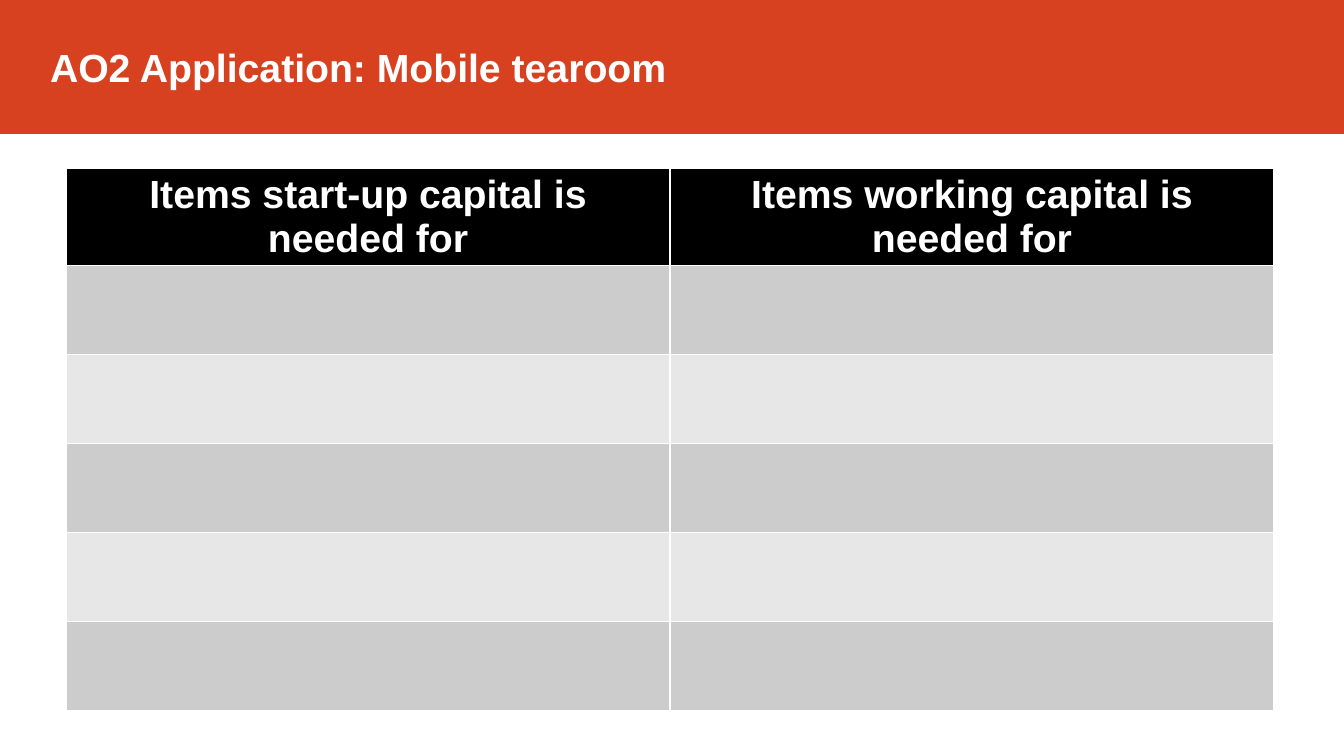
from dataclasses import dataclass

from pptx import Presentation
from pptx.dml.color import RGBColor
from pptx.enum import shapes, text
from pptx.slide import Slide
from pptx.text.text import TextFrame
from pptx import util as u

EMU_PER_PX = 914400 / 100.8
PAGE_WIDTH, PAGE_HEIGHT = 1344, 756
BANNER_RED = RGBColor(0xD7, 0x41, 0x20)
HEADER_BLACK = RGBColor(0x00, 0x00, 0x00)
DARK_BAND = RGBColor(0xCC, 0xCC, 0xCC)
LIGHT_BAND = RGBColor(0xE7, 0xE7, 0xE7)
WHITE = RGBColor(0xFF, 0xFF, 0xFF)


@dataclass(frozen=True)
class Banner:
    title: str
    height: int
    indent: int


@dataclass(frozen=True)
class BandedTable:
    headings: tuple[str, ...]
    empty_rows: int
    left: int
    top: int
    column_width: int
    row_height: int


BANNER = Banner("AO2 Application: Mobile tearoom", 133, 50)
CAPITAL_TABLE = BandedTable(
    ("Items start-up capital is needed for", "Items working capital is needed for"),
    empty_rows=5, left=66, top=168, column_width=604, row_height=89,
)


def px(length: int) -> u.Emu:
    return u.Emu(round(length * EMU_PER_PX))


def write(frame: TextFrame, words: str, alignment: text.PP_ALIGN) -> None:
    para = frame.paragraphs[0]
    para.text = words
    para.alignment = alignment
    para.font.name = "Arial"
    para.font.size = u.Pt(28)
    para.font.bold = True
    para.font.color.rgb = WHITE


def draw_banner(page: Slide, banner: Banner) -> None:
    box = page.shapes.add_shape(
        shapes.MSO_SHAPE.RECTANGLE, 0, 0, px(PAGE_WIDTH), px(banner.height)
    )
    box.shadow.inherit = False
    box.fill.solid()
    box.fill.fore_color.rgb = BANNER_RED
    box.line.color.rgb = BANNER_RED
    box.line.width = u.Pt(1)
    frame = box.text_frame
    frame.word_wrap = True
    frame.margin_left = px(banner.indent)
    frame.vertical_anchor = text.MSO_ANCHOR.MIDDLE
    write(frame, banner.title, text.PP_ALIGN.LEFT)


def draw_table(page: Slide, banded: BandedTable) -> None:
    row_count, column_count = banded.empty_rows + 1, len(banded.headings)
    table = page.shapes.add_table(
        row_count, column_count, px(banded.left), px(banded.top),
        px(banded.column_width * column_count), px(banded.row_height * row_count),
    ).table
    for column in table.columns:
        column.width = px(banded.column_width)
    for index, row in enumerate(table.rows):
        row.height = px(banded.row_height)
        band = DARK_BAND if index % 2 else LIGHT_BAND
        for cell in row.cells:
            cell.fill.solid()
            cell.fill.fore_color.rgb = band if index else HEADER_BLACK
    for cell, heading in zip(table.rows[0].cells, banded.headings):
        write(cell.text_frame, heading, text.PP_ALIGN.CENTER)
    table.first_row = False
    table.horz_banding = False


def main() -> None:
    deck = Presentation()
    deck.slide_width, deck.slide_height = px(PAGE_WIDTH), px(PAGE_HEIGHT)
    page = deck.slides.add_slide(deck.slide_layouts[6])
    draw_banner(page, BANNER)
    draw_table(page, CAPITAL_TABLE)
    deck.save("out.pptx")


if __name__ == "__main__":
    main()
